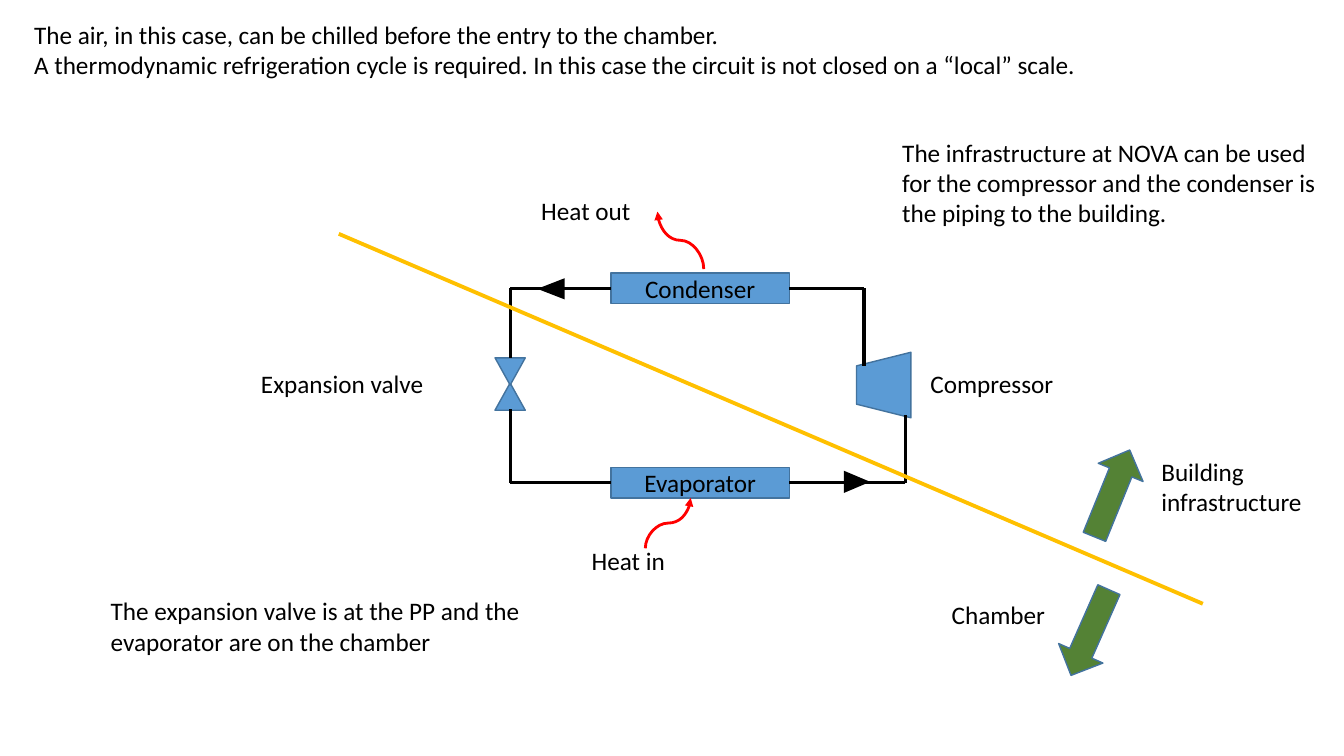
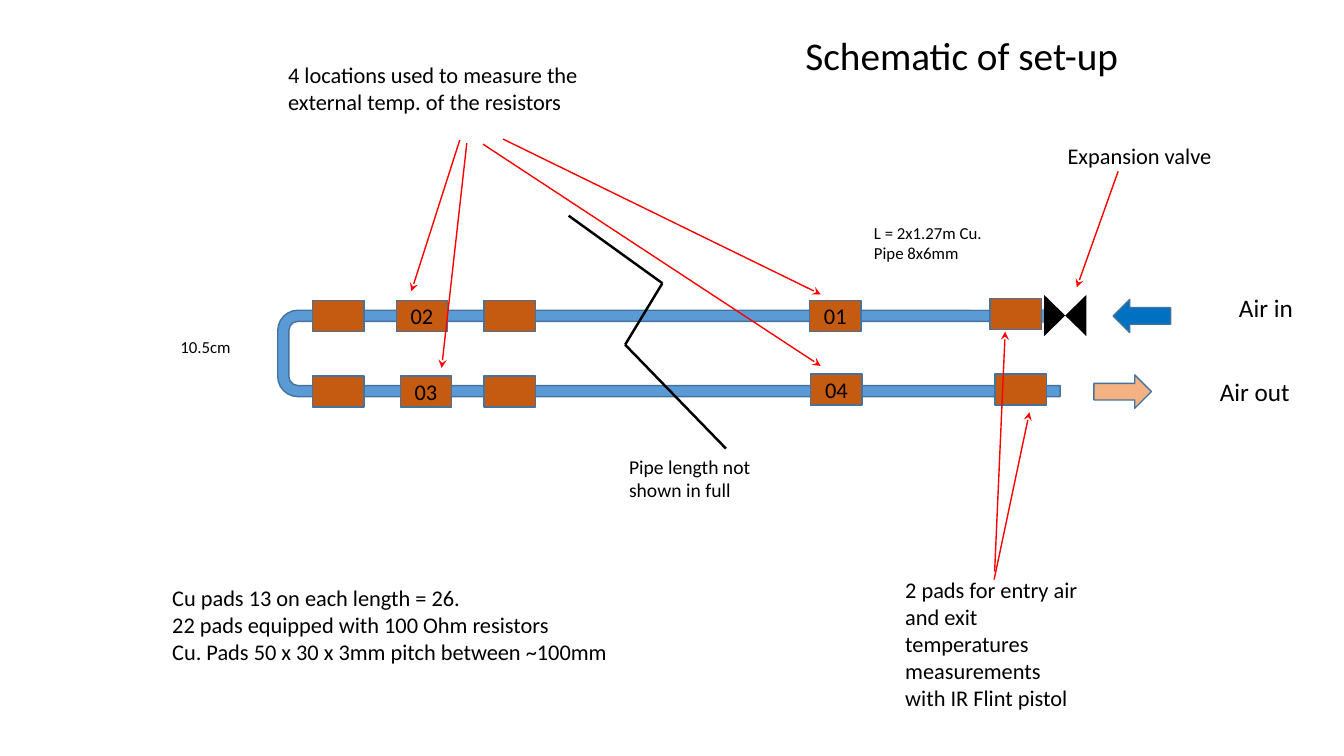
"""Draw the cooling circuit and the schematic of its test set-up."""
from dataclasses import dataclass

from lxml.etree import SubElement
from pptx import Presentation
from pptx.dml.color import RGBColor
from pptx.enum.shapes import MSO_CONNECTOR as LINK, MSO_SHAPE as FORM
from pptx.enum.text import MSO_ANCHOR as ANCHOR, MSO_AUTO_SIZE as FIT, PP_ALIGN as ALIGN
from pptx.oxml.ns import qn
from pptx.util import Inches, Pt

Point = tuple[float, float]
Rect = tuple[float, float, float, float]

FONT = "Calibri"
BLACK, WHITE, RED, GOLD = "000000", "FFFFFF", "FF0000", "FFC000"
BLUE, EDGE, GREEN, COPPER = "5B9BD5", "43739E", "548235", "C55A11"
PEACH, AZURE = "F4B183", "0070C0"


@dataclass(frozen=True)
class Part:
    form: FORM
    at: Rect
    fill: str = BLUE
    edge: str = EDGE
    turn: float = 0
    text: str = ""
    size: int = 18
    bends: tuple[float, ...] = ()


@dataclass(frozen=True)
class Note:
    at: Rect
    text: str
    size: int = 18


@dataclass(frozen=True)
class Wire:
    start: Point
    end: Point
    hue: str = BLACK
    width: float = 2.25
    head: str = ""


def tint(hue: str) -> RGBColor:
    return RGBColor.from_string(hue)


def write(frame, text: str, *, size: int = 18, hue: str = BLACK, align=ALIGN.LEFT) -> None:
    for i, line in enumerate(text.split("\n")):
        para = frame.add_paragraph() if i else frame.paragraphs[0]
        para.alignment = align
        run = para.add_run()
        run.text = line
        run.font.name, run.font.size = FONT, Pt(size)
        run.font.color.rgb = tint(hue)


def add_part(tree, part: Part):
    shape = tree.add_shape(part.form, *map(Inches, part.at))
    shape.shadow.inherit = False
    shape.rotation = part.turn
    shape.fill.solid()
    shape.fill.fore_color.rgb = tint(part.fill)
    if part.edge:
        shape.line.color.rgb = tint(part.edge)
        shape.line.width = Pt(1)
    else:
        shape.line.fill.background()
    for i, bend in enumerate(part.bends):
        shape.adjustments[i] = bend
    if part.text:
        frame = shape.text_frame
        frame.margin_left = frame.margin_right = frame.margin_top = frame.margin_bottom = 0
        frame.vertical_anchor = ANCHOR.MIDDLE
        write(frame, part.text, size=part.size, align=ALIGN.CENTER)
    return shape


def add_note(tree, note: Note):
    box = tree.add_textbox(*map(Inches, note.at))
    frame = box.text_frame
    frame.word_wrap = True
    frame.auto_size = FIT.SHAPE_TO_FIT_TEXT
    write(frame, note.text, size=note.size)
    return box


def add_wire(tree, wire: Wire, kind=LINK.STRAIGHT):
    link = tree.add_connector(kind, *map(Inches, wire.start + wire.end))
    link.line.color.rgb = tint(wire.hue)
    link.line.width = Pt(wire.width)
    props = link._element.spPr
    if wire.head:
        SubElement(props.find(qn("a:ln")), qn("a:tailEnd")).set("type", wire.head)
    SubElement(props, qn("a:effectLst"))
    return link


def add_curve(tree, start: Point, end: Point, turn: int) -> None:
    sign = 1 if turn == 90 else -1
    mid_x, mid_y = (start[0] + end[0]) / 2, (start[1] + end[1]) / 2
    off_x, off_y = sign * (start[1] - mid_y), sign * (mid_x - start[0])
    wire = Wire((mid_x + off_x, mid_y + off_y), (mid_x - off_x, mid_y - off_y), RED, 2, "triangle")
    link = add_wire(tree, wire, LINK.CURVE)
    link._element.spPr.find(qn("a:xfrm")).set("rot", str(turn * 60000))


def draw_cycle(tree) -> None:
    left, right, top, base = 5.06, 8.57, 2.86, 4.79
    out = 8.98
    add_part(tree, Part(FORM.TRAPEZOID, (8.44, 3.55, 0.65, 0.54), turn=270))
    valve = tree.add_group_shape().shapes
    for y, turn in ((3.8, 0), (3.55, 180)):
        add_part(valve, Part(FORM.ISOSCELES_TRIANGLE, (4.91, y, 0.3, 0.27), turn=turn))
    for x, y, end in ((out, 4.12, base), (right, top, 3.63), (left, top, 3.55), (left, 4.06, base)):
        add_wire(tree, Wire((x, y), (x, end)))
    for name, y, ends in (("Condenser", top, (left, right)), ("Evaporator", base, (left, out))):
        block = add_part(tree, Part(FORM.RECTANGLE, (6.06, y - 0.15, 1.77, 0.3), text=name))
        for x, side in zip(ends, (1, 3)):
            add_wire(tree, Wire((x, y), (6.94, y))).end_connect(block, side)
    for at, turn in (((5.36, 2.73, 0.21, 0.27), 270), ((8.39, 4.65, 0.22, 0.26), 90)):
        add_part(tree, Part(FORM.ISOSCELES_TRIANGLE, at, BLACK, "", turn))
    add_wire(tree, Wire((3.36, 2.32), (11.93, 5.99), GOLD, 2.75))
    add_curve(tree, (6.98, 2.67), (6.52, 2.1), 270)
    add_curve(tree, (6.4, 5.44), (6.85, 4.94), 90)
    for x, y, turn in ((10.79, 4.43, 22.1), (10.57, 5.81, 203.8)):
        add_part(tree, Part(FORM.UP_ARROW, (x, y, 0.48, 0.93), GREEN, turn=turn))
    for note in (
        Note((0.24, 0.14, 11.36, 0.71),
             "The air, in this case, can be chilled before the entry to the chamber.\n"
             "A thermodynamic refrigeration cycle is required. "
             "In this case the circuit is not closed on a “local” scale."),
        Note((9.13, 3.6, 1.44, 0.4), "Compressor"),
        Note((2.49, 3.6, 1.96, 0.4), "Expansion valve"),
        Note((5.27, 1.89, 1.17, 0.4), "Heat out"),
        Note((5.77, 5.36, 1.17, 0.4), "Heat in"),
        Note((1, 5.86, 4.33, 0.71),
             "The expansion valve is at the PP and the evaporator are on the chamber"),
        Note((8.85, 1.31, 4.48, 1.01),
             "The infrastructure at NOVA can be used for the compressor "
             "and the condenser is the piping to the building."),
        Note((11.42, 4.48, 1.67, 0.71), "Building infrastructure"),
        Note((9.34, 5.9, 1.29, 0.4), "Chamber"),
    ):
        add_note(tree, note)


def draw_setup(tree) -> None:
    bends = (0.103, 0.25, 0.605, 0.188, 1)
    add_part(tree, Part(FORM.U_TURN_ARROW, (6.1, -0.48, 1.07, 7.76), turn=270, bends=bends))
    for at in ((9.73, 3.2, 0.95, 0.22), (9.63, 2.62, 1.05, 0.45)):
        add_part(tree, Part(FORM.RECTANGLE, at, WHITE, ""))
    for x, y, name in (
        (3.1, 2.98, ""), (3.93, 2.98, "02"), (4.8, 2.98, ""), (8.03, 2.98, "01"), (9.82, 2.96, ""),
        (3.1, 3.73, ""), (3.97, 3.73, "03"), (4.8, 3.73, ""), (8.04, 3.71, "04"), (9.87, 3.71, ""),
    ):
        add_part(tree, Part(FORM.RECTANGLE, (x, y, 0.51, 0.31), COPPER, text=name, size=16))
    add_part(tree, Part(FORM.FLOWCHART_COLLATE, (10.36, 2.92, 0.41, 0.42), BLACK, "", 270))
    for x, y, fill, turn in ((10.97, 3.6, PEACH, 270), (11.16, 2.85, AZURE, 90)):
        add_part(tree, Part(FORM.DOWN_ARROW, (x, y, 0.33, 0.57), fill, turn=turn))
    cut = ((5.64, 2.14), (6.57, 2.81), (6.2, 3.42), (7.2, 4.45))
    for start, end in zip(cut, cut[1:]):
        add_wire(tree, Wire(start, end, width=1.75))
    for note in (
        Note((7.89, 0.26, 4.67, 0.57), "Schematic of set-up", 28),
        Note((2.76, 0.56, 3.1, 0.64),
             "4 locations used to measure the external temp. of the resistors", 16),
        Note((10.49, 1.36, 2.41, 0.37), "Expansion valve", 16),
        Note((8.57, 2.16, 1.4, 0.5), "L = 2x1.27m Cu. Pipe 8x6mm", 12),
        Note((1.69, 3.29, 1.04, 0.3), "10.5cm", 12),
        Note((12.19, 2.85, 0.9, 0.4), "Air in"),
        Note((12, 3.68, 0.9, 0.4), "Air out"),
        Note((6.14, 4.46, 1.78, 0.57), "Pipe length not shown in full", 14),
        Note((1.61, 5.75, 5.74, 0.91),
             "Cu pads 13 on each length = 26.\n22 pads equipped with 100 Ohm resistors\n"
             "Cu. Pads 50 x 30 x 3mm pitch between ~100mm", 16),
    ):
        add_note(tree, note)
    probe = add_note(tree, Note(
        (8.88, 5.67, 1.97, 1.45),
        "2 pads for entry air and exit temperatures measurements with IR Flint pistol", 16))
    for start, end in (
        ((4.63, 1.42), (4.38, 3.65)), ((4.56, 1.39), (4.08, 2.89)), ((4.99, 1.38), (8.14, 2.92)),
        ((4.79, 1.43), (8.14, 3.63)), ((11.09, 1.7), (10.68, 2.85)), ((9.86, 5.75), (10.21, 4.09)),
    ):
        add_wire(tree, Wire(start, end, RED, 1, "stealth"))
    add_wire(tree, Wire((9.87, 5.67), (9.97, 3.29), RED, 1, "stealth")).begin_connect(probe, 0)


def main() -> None:
    deck = Presentation()
    deck.slide_width, deck.slide_height = Inches(13.33), Inches(7.5)
    for draw in (draw_cycle, draw_setup):
        draw(deck.slides.add_slide(deck.slide_layouts[6]).shapes)
    deck.save("out.pptx")


if __name__ == "__main__":
    main()
